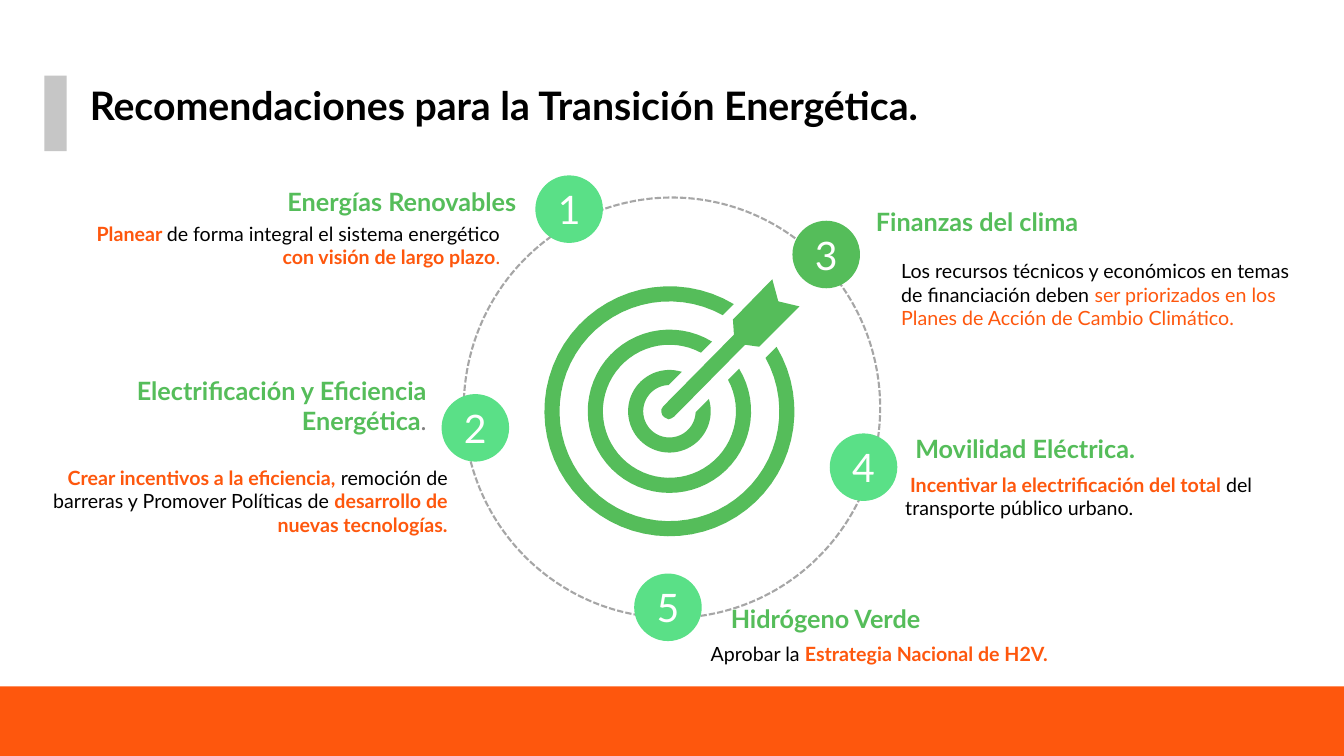
from math import asin, cos, pi, sin

from lxml.etree import SubElement
from pptx import Presentation
from pptx.dml.color import RGBColor
from pptx.enum.dml import MSO_LINE
from pptx.enum.shapes import MSO_SHAPE
from pptx.enum.text import MSO_ANCHOR, MSO_AUTO_SIZE, PP_ALIGN
from pptx.util import Pt

PIXEL = 9144
ORANGE, GREEN, MINT = "FE570D", "55BD5A", "5AE087"
BLACK, WHITE, SILVER, GREY = "000000", "FFFFFF", "C6C6C6", "A6A6A6"
LEFT, CENTER, RIGHT = PP_ALIGN.LEFT, PP_ALIGN.CENTER, PP_ALIGN.RIGHT


def px(*values):
    return [round(value * PIXEL) for value in values]


def color(hex_string):
    return RGBColor.from_string(hex_string)


def add_span(para, text, size=14, ink=BLACK, bold=False):
    span = para.add_run()
    span.text = text
    span.font.name = "Lato"
    span.font.size = Pt(size)
    span.font.bold = bold
    span.font.color.rgb = color(ink)


def arc(center, radius, half_gap, steps=60):
    start = pi / 4 + asin(half_gap / radius)
    end = 2 * pi + pi / 4 - asin(half_gap / radius)
    angles = [start + (end - start) * step / steps for step in range(steps + 1)]
    return [(center[0] + radius * cos(angle), center[1] - radius * sin(angle))
            for angle in angles]


class SlideBuilder:
    def __init__(self, deck):
        self.page = deck.slides.add_slide(deck.slide_layouts[5])

    def title(self, text, *bounds):
        box = self.page.shapes.title
        box.left, box.top, box.width, box.height = px(*bounds)
        frame = box.text_frame
        frame.margin_left = frame.margin_right = 0
        frame.margin_top = frame.margin_bottom = 0
        frame.vertical_anchor = MSO_ANCHOR.TOP
        frame.auto_size = MSO_AUTO_SIZE.NONE
        para = frame.paragraphs[0]
        para.alignment = LEFT
        add_span(para, text, size=28, bold=True)

    def paint(self, shape, fill):
        shape.shadow.inherit = False
        shape.fill.solid()
        shape.fill.fore_color.rgb = color(fill)
        shape.line.fill.background()

    def bar(self, fill, *bounds):
        shape = self.page.shapes.add_shape(MSO_SHAPE.RECTANGLE, *px(*bounds))
        self.paint(shape, fill)

    def orbit(self, *bounds):
        shape = self.page.shapes.add_shape(MSO_SHAPE.OVAL, *px(*bounds))
        shape.shadow.inherit = False
        shape.fill.background()
        shape.line.color.rgb = color(GREY)
        shape.line.width = Pt(1.5)
        shape.line.dash_style = MSO_LINE.SQUARE_DOT
        dash = shape.line._ln.prstDash
        dash.set("val", "sysDash")

    def badge(self, number, fill, left, top):
        shape = self.page.shapes.add_shape(MSO_SHAPE.OVAL, *px(left, top, 67, 67))
        self.paint(shape, fill)
        frame = shape.text_frame
        frame.vertical_anchor = MSO_ANCHOR.MIDDLE
        para = frame.paragraphs[0]
        para.alignment = CENTER
        add_span(para, str(number), size=28, ink=WHITE)

    def outline(self, contours, fill):
        first, *others = [[tuple(px(*point)) for point in contour] for contour in contours]
        builder = self.page.shapes.build_freeform(*first[0])
        builder.add_line_segments(first[1:], close=True)
        for contour in others:
            builder.move_to(*contour[0])
            builder.add_line_segments(contour[1:], close=True)
        self.paint(builder.convert_to_shape(), fill)

    def text(self, spans, bounds, align=LEFT, indent=0):
        box = self.page.shapes.add_textbox(*px(*bounds))
        frame = box.text_frame
        frame.word_wrap = True
        frame.auto_size = MSO_AUTO_SIZE.SHAPE_TO_FIT_TEXT
        para = frame.paragraphs[0]
        para.alignment = align
        if indent:
            para._p.get_or_add_pPr().set("marL", str(px(indent)[0]))
        for text, style in spans:
            add_span(para, text, **style)


HEADING = dict(size=18, ink=GREEN, bold=True)
PLAIN = dict()
STRONG = dict(ink=ORANGE, bold=True)
ACCENT = dict(ink=ORANGE)

TOPICS = [
    dict(badge=(MINT, 531, 174), align=RIGHT,
         heading=[("Energías Renovables", HEADING)], heading_at=(176, 180, 346, 40),
         body=[("Planear ", STRONG),
               ("de forma integral el sistema energético ", PLAIN),
               ("con visión de largo plazo", STRONG), (".", ACCENT)],
         body_at=(74, 215, 432, 57)),
    dict(badge=(MINT, 438, 391), align=RIGHT,
         heading=[("Electrificación y Eficiencia Energética", HEADING),
                  (".", dict(size=18, ink="808080"))],
         heading_at=(87, 367, 346, 71),
         body=[("Crear incentivos a la eficiencia,", STRONG),
               (" remoción de barreras y Promover Políticas de ", PLAIN),
               ("desarrollo de nuevas tecnologías.", STRONG)],
         body_at=(22, 457, 432, 81)),
    dict(badge=(GREEN, 786, 219),
         heading=[("Finanzas del clima", HEADING)], heading_at=(859, 200, 413, 40),
         body=[("Los recursos técnicos y económicos en temas de financiación deben ", PLAIN),
               ("ser priorizados en los Planes de Acción de Cambio Climático.", ACCENT)],
         body_at=(834, 252, 466, 104), indent=50),
    dict(badge=(MINT, 823, 430),
         heading=[("Movilidad Eléctrica.", HEADING)], heading_at=(898, 425, 346, 40),
         body=[(" Incentivar la electrificación del total ", STRONG),
               ("del transporte público urbano.", PLAIN)],
         body_at=(888, 464, 399, 57)),
    dict(badge=(MINT, 629, 569),
         heading=[("Hidrógeno Verde", HEADING)], heading_at=(715, 594, 346, 40),
         body=[("Aprobar la ", PLAIN), ("Estrategia Nacional de H2V.", STRONG)],
         body_at=(645, 632, 668, 34), indent=50),
]

TARGET_CENTER = (664, 408)
TARGET_RINGS = [(41, 26, 19), (81, 66, 19), (124, 109, 30)]
ARROW = [(766, 277), (772, 299), (793, 304), (753, 344), (739, 342), (669, 413),
         (666, 415), (663, 416), (659, 414), (657, 412), (656, 409), (656, 406),
         (658, 403), (728, 332), (727, 317)]


def main():
    deck = Presentation()
    deck.slide_width, deck.slide_height = px(1333, 750)
    slide = SlideBuilder(deck)
    slide.bar(SILVER, 44, 75, 22, 75)
    slide.bar(ORANGE, 0, 681, 1333, 69)
    slide.title("Recomendaciones para la Transición Energética.", 89, 81, 1124, 47)
    slide.orbit(460, 196, 413, 417)
    rings = [arc(TARGET_CENTER, outer, gap) + arc(TARGET_CENTER, inner, gap)[::-1]
             for outer, inner, gap in TARGET_RINGS]
    slide.outline(rings + [ARROW], GREEN)
    for number, topic in enumerate(TOPICS, 1):
        align = topic.get("align", LEFT)
        slide.badge(number, *topic["badge"])
        slide.text(topic["heading"], topic["heading_at"], align)
        slide.text(topic["body"], topic["body_at"], align, topic.get("indent", 0))
    deck.save("out.pptx")


if __name__ == "__main__":
    main()
